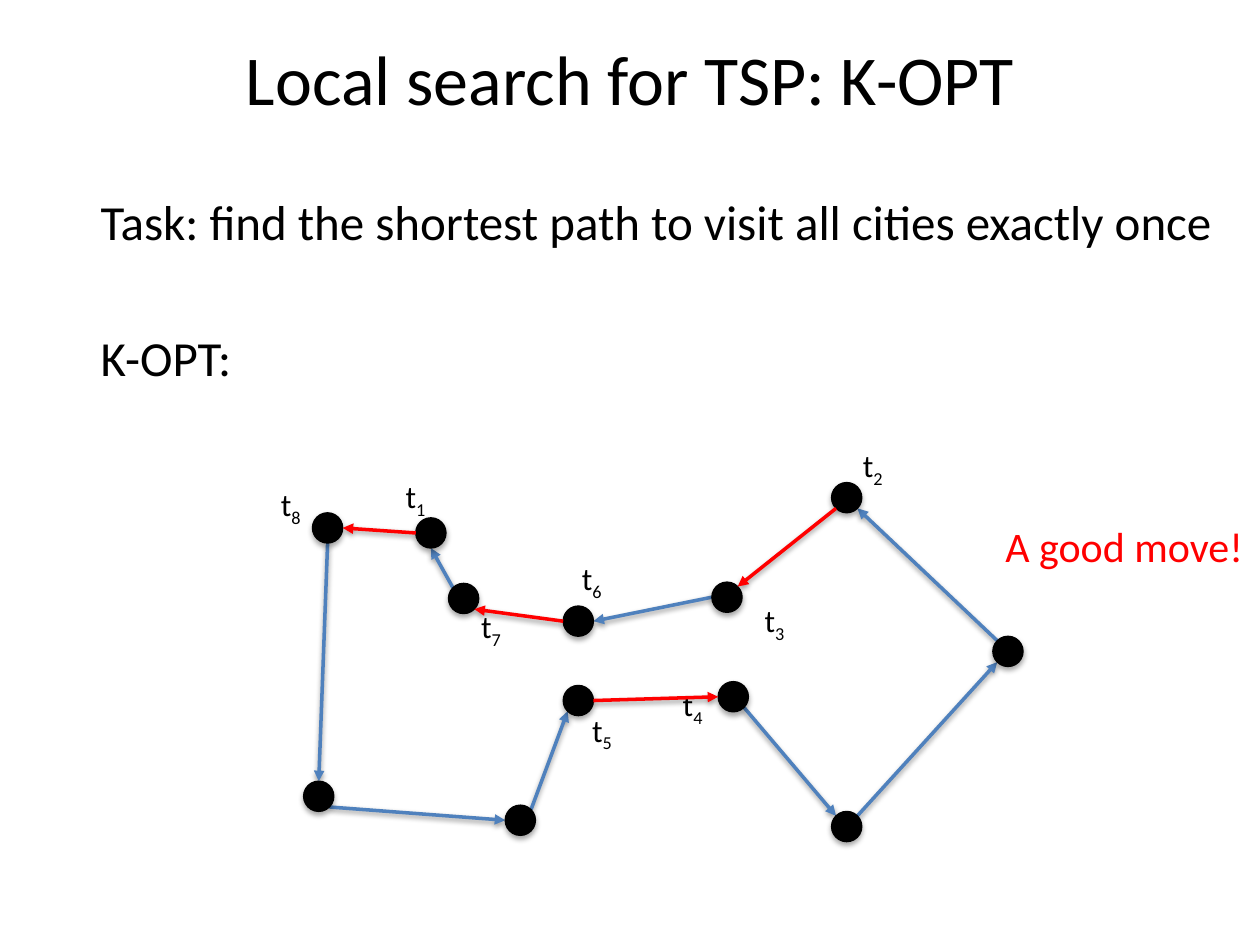
from dataclasses import dataclass
from math import cos, radians, sin

from lxml.etree import SubElement
from pptx import Presentation
from pptx.dml.color import RGBColor
from pptx.enum.shapes import MSO_CONNECTOR, MSO_SHAPE
from pptx.enum.text import MSO_ANCHOR, MSO_AUTO_SIZE, PP_ALIGN
from pptx.oxml.ns import qn
from pptx.shapes.autoshape import Shape
from pptx.shapes.shapetree import GroupShapes, SlideShapes
from pptx.slide import Slide
from pptx.util import Inches, Pt

BLACK = RGBColor(0x00, 0x00, 0x00)
BLUE = RGBColor(0x4F, 0x81, 0xBD)
RED = RGBColor(0xFF, 0x00, 0x00)
FONT = "Calibri"
RADIUS = 0.12

# Attachment points on a city, as angles clockwise from the right
ANGLES = {"right": 0, "bottom right": 45, "bottom": 90, "bottom left": 135,
          "left": 180, "top left": 225, "top": 270, "top right": 315}


@dataclass(frozen=True)
class City:
    x: float
    y: float

    def point(self, side: str) -> tuple[float, float]:
        angle = radians(ANGLES[side])
        return self.x + RADIUS * cos(angle), self.y + RADIUS * sin(angle)


@dataclass(frozen=True)
class Edge:
    start: str
    start_side: str
    end: str
    end_side: str


@dataclass(frozen=True)
class Label:
    index: str
    left: float
    top: float


CITIES = {
    "t1": City(3.42, 4.23), "t2": City(6.72, 3.95), "t3": City(5.77, 4.74),
    "t4": City(5.82, 5.53), "t5": City(4.59, 5.56), "t6": City(4.59, 4.93),
    "t7": City(3.68, 4.75), "t8": City(2.60, 4.19),
    "east": City(8.00, 5.17), "southeast": City(6.72, 6.56),
    "south": City(4.13, 6.51), "southwest": City(2.53, 6.32),
}

KEPT_EDGES = [
    Edge("t8", "bottom", "southwest", "top"),
    Edge("southwest", "bottom right", "south", "left"),
    Edge("south", "top right", "t5", "bottom left"),
    Edge("t4", "bottom right", "southeast", "top left"),
    Edge("southeast", "top right", "east", "bottom left"),
    Edge("east", "top left", "t2", "bottom right"),
    Edge("t3", "left", "t6", "right"),
    Edge("t7", "top left", "t1", "bottom"),
]

NEW_EDGES = [
    Edge("t2", "bottom left", "t3", "top right"),
    Edge("t5", "right", "t4", "left"),
    Edge("t1", "left", "t8", "right"),
    Edge("t6", "left", "t7", "bottom right"),
]

LABELS = [
    Label("1", 3.12, 3.74), Label("2", 6.75, 3.49), Label("3", 5.97, 4.72),
    Label("4", 5.32, 5.39), Label("5", 4.60, 5.59), Label("6", 4.52, 4.39),
    Label("7", 3.72, 4.77), Label("8", 2.13, 3.80),
]


def add_shadow(shape, distance: float, opacity: int) -> None:
    effects = SubElement(shape._element.spPr, qn("a:effectLst"))
    shadow = SubElement(effects, qn("a:outerShdw"), blurRad=str(Pt(3.1)),
                        dist=str(Pt(distance)), dir="5400000", rotWithShape="0")
    color = SubElement(shadow, qn("a:srgbClr"), val="000000")
    SubElement(color, qn("a:alpha"), val=str(opacity * 1000))


def add_edge(shapes: SlideShapes | GroupShapes, edge: Edge, color: RGBColor) -> None:
    start = CITIES[edge.start].point(edge.start_side)
    end = CITIES[edge.end].point(edge.end_side)
    connector = shapes.add_connector(
        MSO_CONNECTOR.STRAIGHT, *(Inches(value) for value in start + end))
    connector.line.color.rgb = color
    connector.line.width = Pt(2)
    SubElement(connector.line._get_or_add_ln(), qn("a:tailEnd"), type="triangle")
    add_shadow(connector, distance=1.6, opacity=38)


def add_city(shapes: GroupShapes, city: City) -> None:
    shape = shapes.add_shape(
        MSO_SHAPE.OVAL, Inches(city.x - RADIUS), Inches(city.y - RADIUS),
        Inches(2 * RADIUS), Inches(2 * RADIUS))
    shape.fill.solid()
    shape.fill.fore_color.rgb = BLACK
    shape.line.color.rgb = BLACK
    shape.line.width = Pt(0.75)
    add_shadow(shape, distance=1.8, opacity=35)


def add_text(slide: Slide, text: str, left: float, top: float, width: float,
             height: float, size: int, color: RGBColor = BLACK) -> Shape:
    box = slide.shapes.add_textbox(
        Inches(left), Inches(top), Inches(width), Inches(height))
    text_frame = box.text_frame
    text_frame.word_wrap = True
    text_frame.text = text
    for paragraph in text_frame.paragraphs:
        for run in paragraph.runs:
            run.font.name = FONT
            run.font.size = Pt(size)
            run.font.color.rgb = color
    return box


def add_label(slide: Slide, label: Label) -> None:
    box = add_text(slide, "t", label.left, label.top, 0.41, 0.4, 18)
    box.text_frame.auto_size = MSO_AUTO_SIZE.SHAPE_TO_FIT_TEXT
    subscript = box.text_frame.paragraphs[0].add_run()
    subscript.text = label.index
    subscript.font.name = FONT
    subscript.font.size = Pt(18)
    subscript.font.color.rgb = BLACK
    subscript.font._element.set("baseline", "-25000")


def main() -> None:
    presentation = Presentation()
    presentation.slide_width = Inches(10)
    presentation.slide_height = Inches(7.5)
    slide = presentation.slides.add_slide(presentation.slide_layouts[6])

    # Title and task
    title = add_text(slide, "Local search for TSP: K-OPT", 0.5, 0.26, 9, 0.71, 40)
    title.text_frame.vertical_anchor = MSO_ANCHOR.MIDDLE
    title.text_frame.paragraphs[0].alignment = PP_ALIGN.CENTER
    task = add_text(
        slide,
        "Task: find the shortest path to visit all cities exactly once\nK-OPT:",
        0.7, 1.47, 9.3, 1.98, 28)
    task.text_frame.paragraphs[1].space_before = Pt(44)

    # Cities and the edges kept in the tour
    tour = slide.shapes.add_group_shape()
    for edge in KEPT_EDGES:
        add_edge(tour.shapes, edge, BLUE)
    for city in CITIES.values():
        add_city(tour.shapes, city)

    # Labels and the edges added by the move
    for label in LABELS:
        add_label(slide, label)
    for edge in NEW_EDGES:
        add_edge(slide.shapes, edge, RED)

    # Verdict
    verdict = add_text(slide, "A good move!", 7.88, 4.08, 2.12, 0.5, 24, RED)
    verdict.text_frame.auto_size = MSO_AUTO_SIZE.SHAPE_TO_FIT_TEXT

    presentation.save("out.pptx")


if __name__ == "__main__":
    main()
